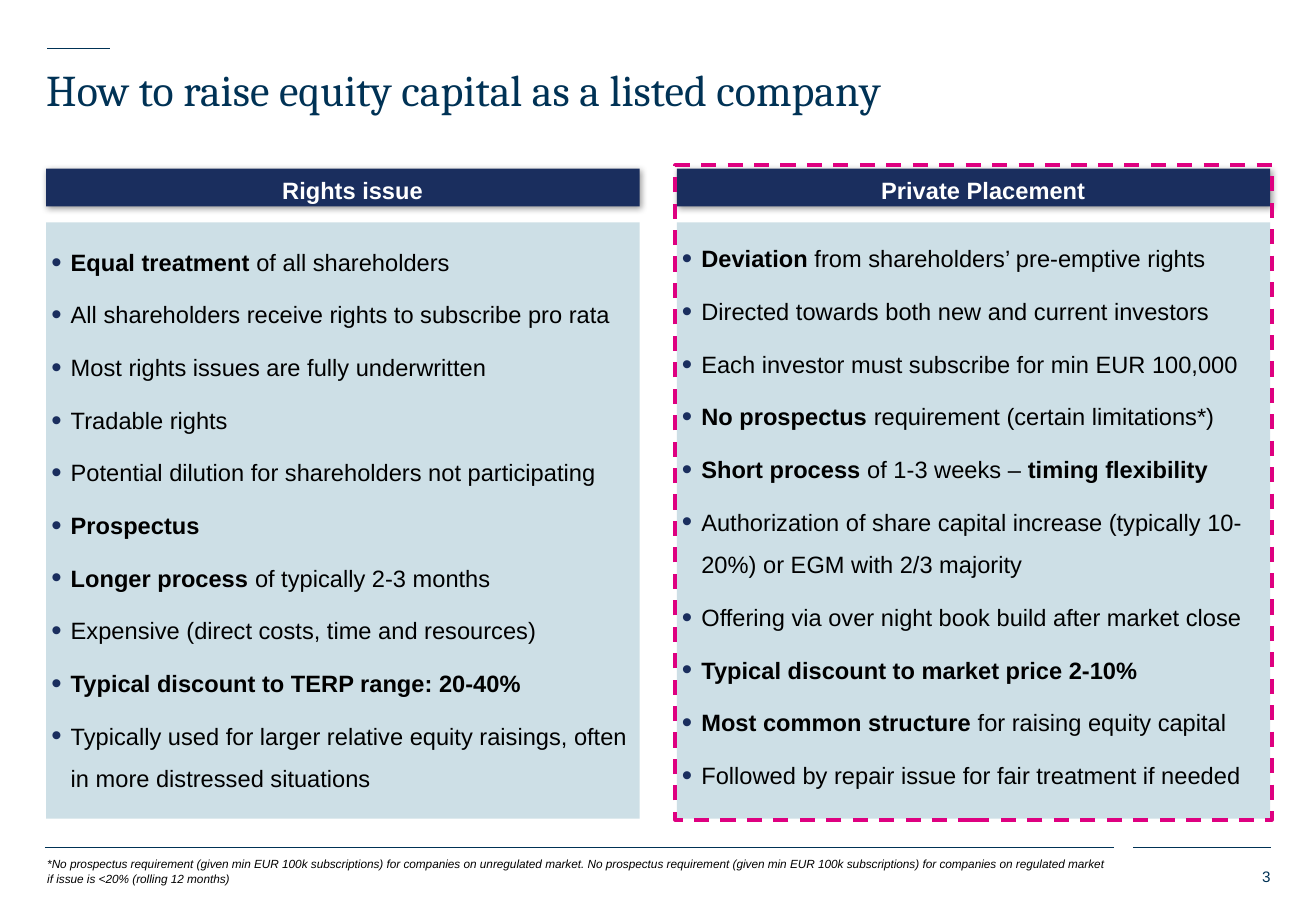
from dataclasses import dataclass
from lxml import etree
from pptx import Presentation
from pptx.dml.color import RGBColor
from pptx.enum.dml import MSO_LINE
from pptx.enum.shapes import MSO_CONNECTOR, MSO_SHAPE
from pptx.enum.text import MSO_ANCHOR, MSO_AUTO_SIZE, PP_ALIGN
from pptx.oxml.ns import qn
from pptx.util import Pt

DASH = MSO_LINE.DASH
STRAIGHT = MSO_CONNECTOR.STRAIGHT
RECTANGLE = MSO_SHAPE.RECTANGLE
TOP, MIDDLE = MSO_ANCHOR.TOP, MSO_ANCHOR.MIDDLE
FIXED = MSO_AUTO_SIZE.NONE
LEFT, CENTER, RIGHT = PP_ALIGN.LEFT, PP_ALIGN.CENTER, PP_ALIGN.RIGHT

COLORS = {
    "title": "003255",
    "header": "1A2E5E",
    "panel": "CDDFE6",
    "highlight": "DE0080",
    "text": "000000",
    "white": "FFFFFF",
}
INDENT = 11.5
COLUMN_WIDTH = 351.7

RIGHTS_ISSUE = [
    "**Equal treatment **of all shareholders",
    "All shareholders receive rights to subscribe pro rata",
    "Most rights issues are fully underwritten",
    "Tradable rights",
    "Potential dilution for shareholders not participating",
    "**Prospectus**",
    "**Longer process **of typically 2-3 months",
    "Expensive (direct costs, time and resources)",
    "**Typical discount to TERP range: 20-40%**",
    "Typically used for larger relative equity raisings, often in more distressed situations",
]
PRIVATE_PLACEMENT = [
    "**Deviation** from shareholders’ pre-emptive rights",
    "Directed towards both new and current investors",
    "Each investor must subscribe for min EUR 100,000",
    "**No prospectus **requirement (certain limitations*)",
    "**Short process **of 1-3 weeks – **timing flexibility**",
    "Authorization of share capital increase (typically 10-20%) or EGM with 2/3 majority",
    "Offering via over night book build after market close",
    "**Typical discount to market price 2-10%**",
    "**Most common structure **for raising equity capital",
    "Followed by repair issue for fair treatment if needed",
]
FOOTNOTE = (
    "*No prospectus requirement (given min EUR 100k subscriptions) for companies on "
    "unregulated market. No prospectus requirement (given min EUR 100k subscriptions) "
    "for companies on regulated market if issue is <20% (rolling 12 months)"
)
COLUMNS = [
    ("Rights issue", 27.4, RIGHTS_ISSUE, 349),
    ("Private Placement", 401.2, PRIVATE_PLACEMENT, 345),
]


def rgb(name):
    return RGBColor.from_string(COLORS[name])


@dataclass
class EquitySlide:
    """Draws styled elements on one slide."""

    page: object
    body_font: str = "Arial"
    title_font: str = "Cambria"

    def frame(self, shape, anchor=TOP, inset=0):
        frame = shape.text_frame
        frame.word_wrap = True
        frame.auto_size = FIXED
        frame.vertical_anchor = anchor
        frame.margin_left = Pt(inset)
        frame.margin_right = frame.margin_top = frame.margin_bottom = 0
        return frame

    def font(self, para, size, color, name=None, bold=None, italic=None):
        font = para.font
        font.name = name or self.body_font
        font.size = Pt(size)
        font.color.rgb = rgb(color)
        font.bold, font.italic = bold, italic

    def title(self, text, left, top, width, height):
        box = self.page.shapes.title
        box.left, box.top, box.width, box.height = map(Pt, (left, top, width, height))
        para = self.frame(box).paragraphs[0]
        para.text = text
        para.alignment = LEFT
        self.font(para, 26, "title", self.title_font)

    def line(self, left, right, y):
        line = self.page.shapes.add_connector(STRAIGHT, Pt(left), Pt(y), Pt(right), Pt(y))
        line.line.color.rgb = rgb("title")
        line.line.width = Pt(0.75)
        etree.SubElement(line._element.spPr, qn("a:effectLst"))

    def rectangle(self, left, top, width, height, fill=None):
        box = self.page.shapes.add_shape(RECTANGLE, *map(Pt, (left, top, width, height)))
        box.shadow.inherit = False
        box.line.fill.background()
        if fill:
            box.fill.solid()
            box.fill.fore_color.rgb = rgb(fill)
        else:
            box.fill.background()
        return box

    def header(self, text, left, top, width, height):
        box = self.rectangle(left, top, width, height, "header")
        effects = box._element.spPr.find(qn("a:effectLst"))
        shadow = etree.SubElement(effects, qn("a:outerShdw"), blurRad=str(Pt(4)),
                                  dist=str(Pt(1)), dir="2700000", algn="tl", rotWithShape="0")
        color = etree.SubElement(shadow, qn("a:srgbClr"), val=COLORS["text"])
        etree.SubElement(color, qn("a:alpha"), val="40000")
        para = self.frame(box, MIDDLE, INDENT).paragraphs[0]
        para.text = text
        para.alignment = CENTER
        para.line_spacing = 1.2
        self.font(para, 14, "white", bold=True)

    def highlight(self, left, top, width, height):
        box = self.rectangle(left, top, width, height)
        box.line.color.rgb = rgb("highlight")
        box.line.width = Pt(2.25)
        box.line.dash_style = DASH

    def text(self, text, left, top, width, height, size, color, spacing, align=LEFT, italic=None):
        box = self.page.shapes.add_textbox(*map(Pt, (left, top, width, height)))
        para = self.frame(box).paragraphs[0]
        para.text = text
        para.alignment = align
        para.line_spacing = spacing
        self.font(para, size, color, italic=italic)

    def bullets(self, items, left, top, width, height):
        box = self.page.shapes.add_textbox(*map(Pt, (left, top, width, height)))
        frame = self.frame(box, MIDDLE, 3)
        for index, item in enumerate(items):
            para = frame.add_paragraph() if index else frame.paragraphs[0]
            para.line_spacing = 1.5
            para.space_after = Pt(3)
            if index:
                para.space_before = Pt(3)
            props = para._p.get_or_add_pPr()
            props.set("marL", str(Pt(INDENT)))
            props.set("indent", str(-Pt(INDENT)))
            color = etree.SubElement(props, qn("a:buClr"))
            etree.SubElement(color, qn("a:srgbClr"), val=COLORS["header"])
            etree.SubElement(props, qn("a:buSzPct"), val="125000")
            etree.SubElement(props, qn("a:buFont"), typeface=self.body_font)
            etree.SubElement(props, qn("a:buChar"), char="•")
            self.font(para, 14, "text")
            for part, words in enumerate(item.split("**")):
                if words:
                    span = para.add_run()
                    span.text = words
                    span.font.bold = part % 2 == 1


def main():
    deck = Presentation()
    deck.slide_width, deck.slide_height = Pt(780), Pt(540)
    slide = EquitySlide(deck.slides.add_slide(deck.slide_layouts[5]))
    slide.line(28, 65.5, 28.8)
    slide.title("How to raise equity capital as a listed company", 27.4, 37.4, 725, 31.7)
    for heading, left, items, text_height in COLUMNS:
        slide.rectangle(left, 131.8, COLUMN_WIDTH, 353.5, "panel")
        slide.bullets(items, left, 129.6, COLUMN_WIDTH, text_height)
        slide.header(heading, left, 100, COLUMN_WIDTH, 22.3)
    slide.highlight(400.3, 97.9, 353.5, 388)
    slide.line(26.6, 660.2, 502.6)
    slide.line(671.8, 753.1, 502.6)
    slide.text(FOOTNOTE, 28, 506.9, 629.3, 27.4, 7, "text", 1.1, italic=True)
    slide.text("3", 733, 511.9, 20.1, 17.3, 9, "title", 1.2, RIGHT)
    deck.save("out.pptx")


if __name__ == "__main__":
    main()
